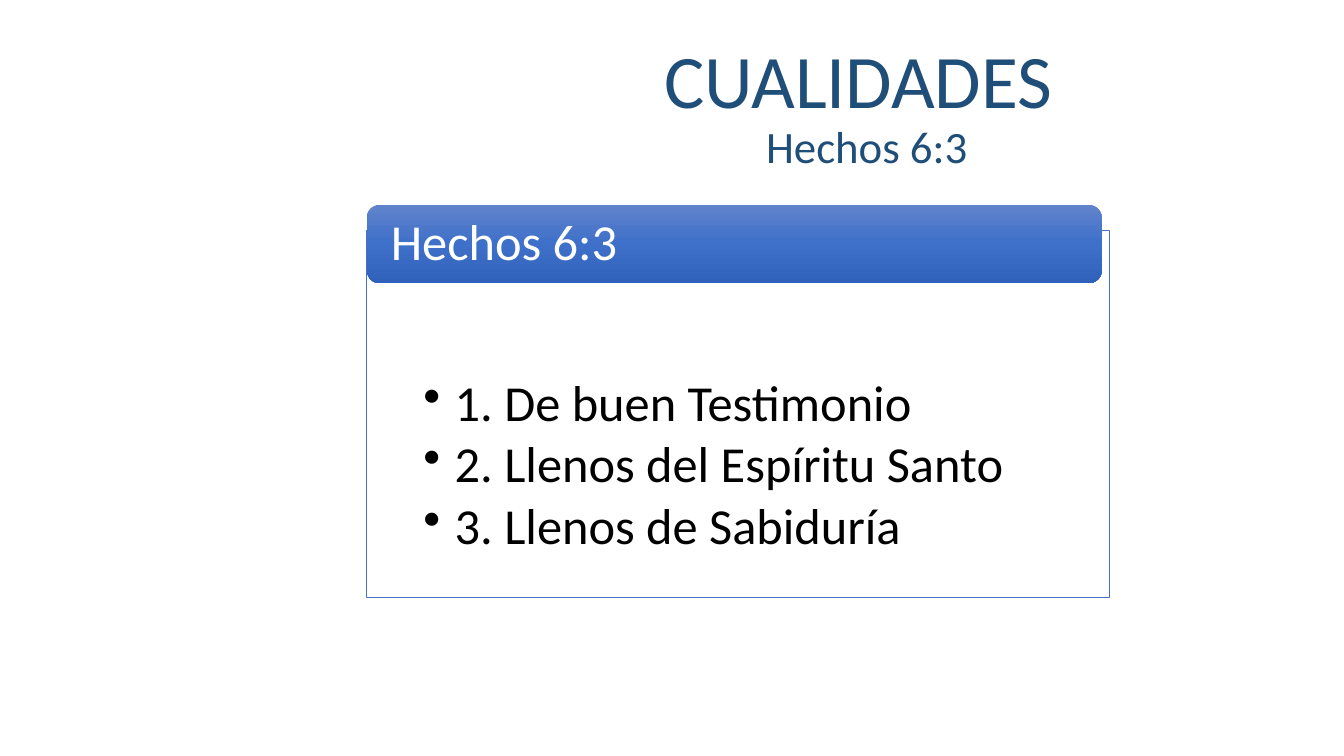
from copy import deepcopy
from dataclasses import dataclass

from lxml import etree
from pptx import Presentation
from pptx.dml.color import RGBColor
from pptx.enum.shapes import MSO_SHAPE
from pptx.enum.text import MSO_ANCHOR, PP_ALIGN
from pptx.oxml.ns import qn
from pptx.util import Emu, Inches, Pt

RECT, ROUND = MSO_SHAPE.RECTANGLE, MSO_SHAPE.ROUNDED_RECTANGLE
TOP, MIDDLE, BOTTOM = MSO_ANCHOR.TOP, MSO_ANCHOR.MIDDLE, MSO_ANCHOR.BOTTOM
LEFT, CENTER = PP_ALIGN.LEFT, PP_ALIGN.CENTER

W, H = Inches(13.33), Inches(7.5)
FONT = "Calibri"
COLORS = {
    "title": "1F4E79", "panel": "FFFFFF", "border": "4472C4",
    "item": "000000", "header": "FFFFFF",
    "light": "6183CB", "mid": "3E70CA", "dark": "3062BB",
}
HEADER_STOPS = ((0, "light"), (0.5, "mid"), (1, "dark"))


@dataclass
class Area:
    """Place on the slide in percent of its width and height."""
    x: float
    y: float
    w: float
    h: float

    def box(self) -> tuple:
        """Return left, top, width and height in EMU."""
        return tuple(Emu(round(share * side / 100)) for share, side in
                     ((self.x, W), (self.y, H), (self.w, W), (self.h, H)))


@dataclass
class Block:
    """Text with its paragraph format; each line is a list of (text, size) runs."""
    lines: list
    color: str
    anchor: int
    align: int = LEFT
    insets: tuple = (0.1, 0.05, 0.1, 0.05)
    after: float = 0
    bullet: bool = False


TITLE_AREA = Area(37.5, 4.8, 54, 18.8)
PANEL_AREA = Area(27.23, 30.53, 55.28, 48.53)
HEADER_AREA = Area(27.3, 27.07, 54.68, 10.4)

TITLE = Block([[("CUALIDADES \v", 54), ("Hechos 6:3", 32)]],
              "title", BOTTOM, CENTER, after=6)
HEADER = Block([[("Hechos 6:3", 36)]], "header", MIDDLE, insets=(0.2, 0, 0.2, 0))
ITEMS = Block([[(item, 36)] for item in (
    "1. De buen Testimonio",
    "2. Llenos del Espíritu Santo",
    "3. Llenos de Sabiduría",
)], "item", TOP, insets=(0.57, 1.46, 0.57, 0.28), after=5, bullet=True)


def rgb(name: str) -> RGBColor:
    """Return a named colour."""
    return RGBColor.from_string(COLORS[name])


def apply(target: object, values: dict) -> None:
    """Set each named attribute on the target."""
    for name, value in values.items():
        setattr(target, name, value)


def add_bullet(p: object) -> None:
    """Give a paragraph a hanging round bullet."""
    pPr = p._p.get_or_add_pPr()
    pPr.set("marL", str(Inches(0.31)))
    pPr.set("indent", str(-Inches(0.31)))
    etree.SubElement(pPr, qn("a:buChar")).set("char", "•")


def write(sp: object, block: Block) -> None:
    """Write a block of text into a shape."""
    tf = sp.text_frame
    sides = ("margin_left", "margin_top", "margin_right", "margin_bottom")
    apply(tf, {"word_wrap": True, "vertical_anchor": block.anchor,
               **dict(zip(sides, map(Inches, block.insets)))})
    for i, runs in enumerate(block.lines):
        p = tf.paragraphs[0] if i == 0 else tf.add_paragraph()
        apply(p, {"alignment": block.align, "line_spacing": 0.9,
                  "space_after": Pt(block.after)})
        if block.bullet:
            add_bullet(p)
        for text, size in runs:
            head, *rest = text.split("\v")
            r = p.add_run()
            r.text = head
            apply(r.font, {"name": FONT, "size": Pt(size)})
            r.font.color.rgb = rgb(block.color)
            if rest:
                p.add_line_break()


def add_box(s: object, kind: int, area: Area) -> object:
    """Add a preset shape without shadow."""
    sp = s.shapes.add_shape(kind, *area.box())
    sp.shadow.inherit = False
    return sp


def fill_gradient(sp: object, stops: tuple) -> None:
    """Fill a shape from top to bottom with three colour stops."""
    sp.fill.gradient()
    sp.fill.gradient_angle = 270
    gs_lst = sp._element.spPr.find(".//" + qn("a:gsLst"))
    gs_lst.append(deepcopy(gs_lst[-1]))
    for stop, (position, name) in zip(sp.fill.gradient_stops, stops):
        stop.position = position
        stop.color.rgb = rgb(name)


def main() -> None:
    """Build the slide and save it."""
    prs = Presentation()
    apply(prs, {"slide_width": W, "slide_height": H})
    s = prs.slides.add_slide(prs.slide_layouts[6])

    write(s.shapes.add_textbox(*TITLE_AREA.box()), TITLE)

    panel = add_box(s, RECT, PANEL_AREA)
    panel.fill.solid()
    panel.fill.fore_color.rgb = rgb("panel")
    panel.line.color.rgb = rgb("border")
    panel.line.width = Pt(0.5)
    write(panel, ITEMS)

    header = add_box(s, ROUND, HEADER_AREA)
    fill_gradient(header, HEADER_STOPS)
    header.line.fill.background()
    write(header, HEADER)

    prs.save("out.pptx")


if __name__ == "__main__":
    main()
